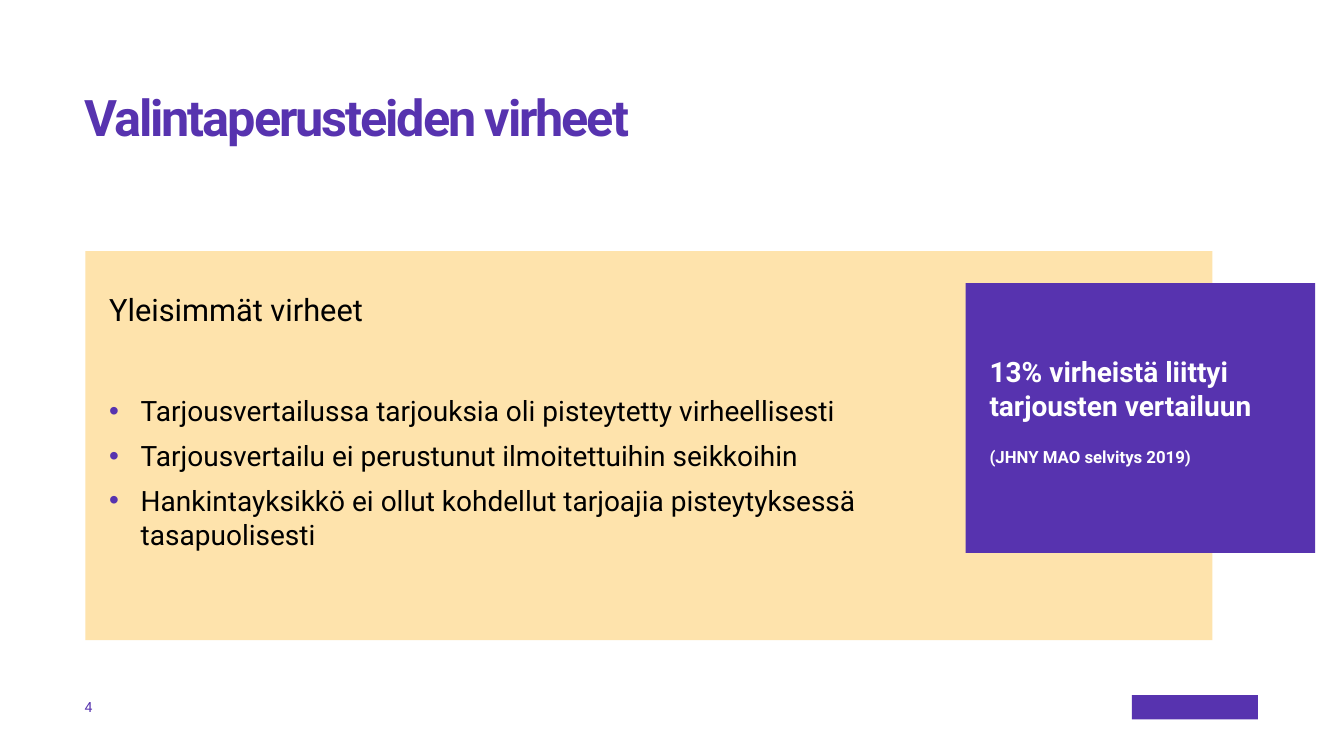
from lxml.etree import SubElement
from pptx import Presentation
from pptx.dml.color import RGBColor
from pptx.enum.shapes import MSO_SHAPE as Shape
from pptx.enum.text import MSO_ANCHOR as Anchor, MSO_AUTO_SIZE as AutoSize, PP_ALIGN as Align
from pptx.oxml.ns import qn
from pptx.util import Pt

PURPLE = RGBColor(0x57, 0x33, 0xAF)
SAND = RGBColor(0xFE, 0xE3, 0xAC)
BLACK = RGBColor(0, 0, 0)
WHITE = RGBColor(0xFF, 0xFF, 0xFF)

TITLE = "Valintaperusteiden virheet"
HEADING = "Yleisimmät virheet"
ERRORS = [
    "Tarjousvertailussa tarjouksia oli pisteytetty virheellisesti",
    "Tarjousvertailu ei perustunut ilmoitettuihin seikkoihin",
    "Hankintayksikkö ei ollut kohdellut tarjoajia pisteytyksessä tasapuolisesti",
]
FINDING = "13% virheistä liittyi tarjousten vertailuun"
REFERENCE = "(JHNY MAO selvitys 2019)"


def apply(target, values):
    for name, value in values.items():
        setattr(target, name, value)


def place(shape, box):
    for name, length in zip(("left", "top", "width", "height"), box):
        setattr(shape, name, Pt(length))


def fill(shape, color):
    shape.fill.solid()
    shape.fill.fore_color.rgb = color


def prepare_frame(shape, insets=(0, 0, 0, 0), anchor=Anchor.TOP):
    frame = shape.text_frame
    apply(frame, {"word_wrap": True, "auto_size": AutoSize.NONE, "vertical_anchor": anchor})
    sides = ("margin_left", "margin_top", "margin_right", "margin_bottom")
    apply(frame, {side: Pt(inset) for side, inset in zip(sides, insets)})
    return frame


def set_bullet(paragraph, indent):
    properties = paragraph._p.get_or_add_pPr()
    properties.set("marL", str(Pt(indent)))
    properties.set("indent", str(-Pt(indent)))
    if indent:
        color = SubElement(properties, qn("a:buClr"))
        SubElement(color, qn("a:srgbClr"), val=str(PURPLE))
        SubElement(properties, qn("a:buFont"), typeface="Arial")
        SubElement(properties, qn("a:buChar"), char="•")
    else:
        SubElement(properties, qn("a:buNone"))


def write(frame, texts, size, color, bold=False, gap=0, indent=0, spacing=1.0):
    paragraphs = []
    for index, text in enumerate(texts):
        paragraph = frame.add_paragraph() if index else frame.paragraphs[0]
        set_bullet(paragraph, indent)
        apply(paragraph, {
            "alignment": Align.LEFT,
            "line_spacing": spacing,
            "space_before": Pt(gap if index else 0),
            "space_after": Pt(0),
        })
        run = paragraph.add_run()
        run.text = text
        apply(run.font, {"name": "Roboto", "size": Pt(size), "bold": bold})
        run.font.color.rgb = color
        paragraphs.append(paragraph)
    return paragraphs


def build_title(shape, box):
    place(shape, box)
    paragraph, = write(prepare_frame(shape), [TITLE], 36, PURPLE, bold=True, spacing=0.9)
    paragraph.runs[0].font._element.set("spc", "-150")


def build_errors(panel, heading, box):
    left, top, width, height = box
    place(panel, box)
    fill(panel, SAND)
    frame = prepare_frame(panel, (17, 102, 199, 17))
    write(frame, ERRORS, 20, BLACK, gap=8, indent=22.5)
    place(heading, (left + 17, top + 28, 578, 63))
    write(prepare_frame(heading), [HEADING], 22, BLACK)


def build_callout(shape, box):
    place(shape, box)
    fill(shape, PURPLE)
    frame = prepare_frame(shape, (17, 51, 17, 51))
    finding, reference = write(frame, [FINDING, REFERENCE], 20, WHITE, bold=True, gap=18)
    reference.runs[0].font.size = Pt(12)


def build_footer(slide, box):
    left, top, width, height = box
    number = slide.shapes.add_textbox(Pt(left), Pt(top), Pt(34), Pt(height))
    write(prepare_frame(number, anchor=Anchor.MIDDLE), ["4"], 10, PURPLE)
    emblem = slide.shapes.add_shape(
        Shape.RECTANGLE, Pt(left + width - 90), Pt(top), Pt(90), Pt(height))
    emblem.shadow.inherit = False
    fill(emblem, PURPLE)
    emblem.line.fill.background()


def build_slide(presentation):
    slide = presentation.slides.add_slide(presentation.slide_layouts[4])
    title, panel, heading, callout, spare = slide.placeholders
    spare._element.getparent().remove(spare._element)
    build_title(title, (60.5, 66.2, 840, 79))
    build_errors(panel, heading, (61, 179.3, 805, 278))
    build_callout(callout, (689.8, 202.2, 249.6, 192.8))
    build_footer(slide, (60.5, 496.6, 838, 17.2))


def main():
    presentation = Presentation()
    apply(presentation, {"slide_width": Pt(960), "slide_height": Pt(540)})
    build_slide(presentation)
    presentation.save("out.pptx")


if __name__ == "__main__":
    main()
